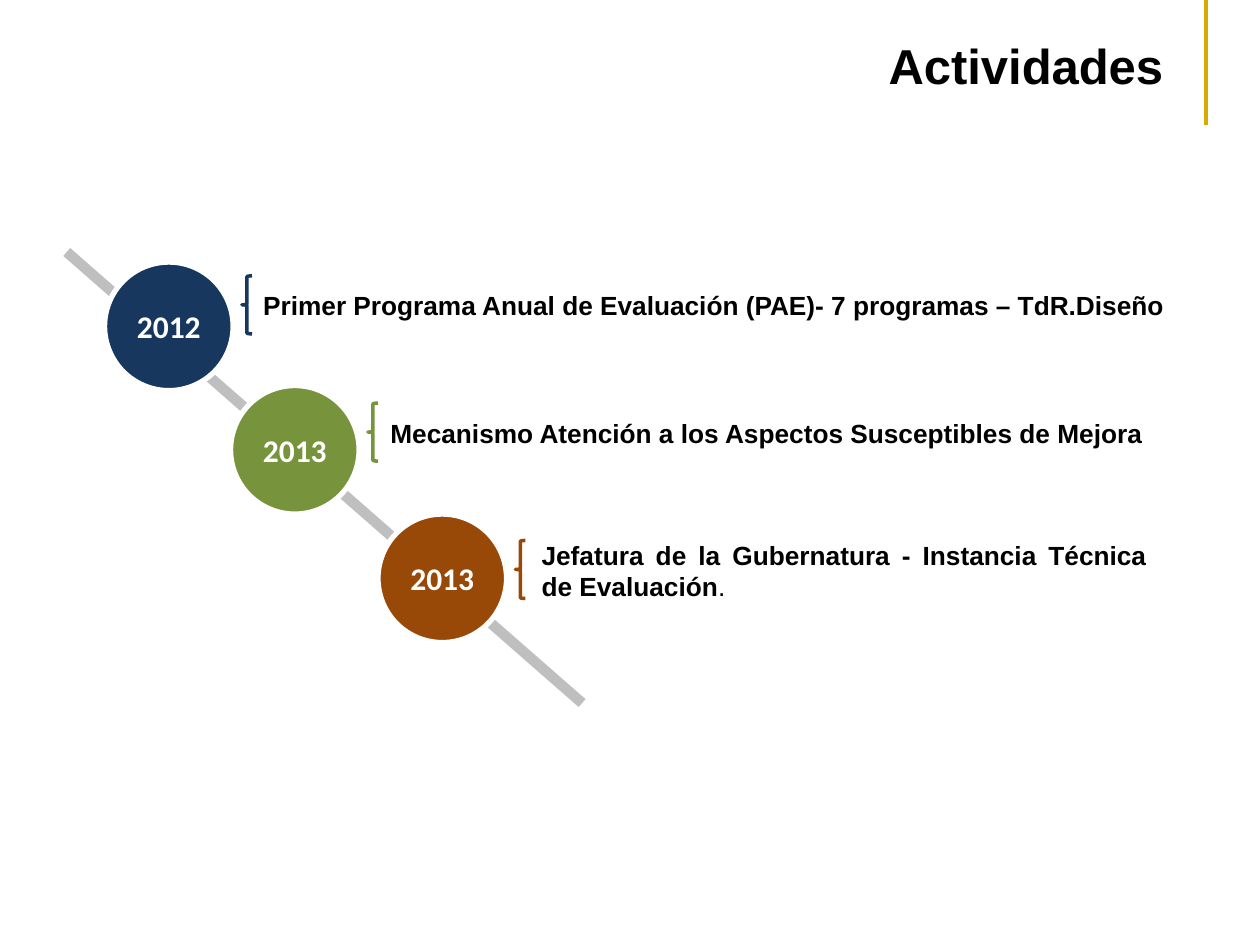
from lxml import etree
from pptx import Presentation
from pptx import util as u
from pptx.dml import color
from pptx.enum import shapes, text
from pptx.oxml import ns

BLACK, WHITE, GREY, GOLD = "000000", "FFFFFF", "BFBFBF", "D9A906"
ALIGN = text.PP_ALIGN

# year, colour, circle (left, top), brace top, label (left, top, width), alignment, runs (words, bold)
MILESTONES = [
    ("2012", "17375E", (0.83, 2.08), 2.19, (1.99, 2.25, 7.42), ALIGN.LEFT,
     [("Primer Programa Anual de Evaluación (PAE)- 7 programas – TdR.Diseño", True)]),
    ("2013", "77933C", (1.83, 3.06), 3.2, (3, 3.26, 6.22), ALIGN.LEFT,
     [("Mecanismo Atención a los Aspectos Susceptibles de Mejora", True)]),
    ("2013", "984807", (3, 4.08), 4.29, (4.2, 4.23, 5), ALIGN.JUSTIFY,
     [("Jefatura de la Gubernatura - Instancia Técnica de Evaluación", True), (".", False)]),
]


def paint(target, hex_colour):
    """Give a fill or a line a solid colour."""
    fill = getattr(target, "fill", target)
    fill.solid()
    fill.fore_color.rgb = color.RGBColor.from_string(hex_colour)


def write(frame, runs, size, font_name, hex_colour, align, anchor):
    """Write one paragraph of (words, bold) runs."""
    frame.word_wrap = True
    frame.vertical_anchor = anchor
    paragraph = frame.paragraphs[0]
    paragraph.alignment = align
    for words, bold in runs:
        run = paragraph.add_run()
        run.text = words
        run.font.size, run.font.name, run.font.bold = u.Pt(size), font_name, bold
        paint(run.font, hex_colour)


def add_label(slide, box, runs, size, align, anchor=text.MSO_ANCHOR.TOP):
    """Add a black Arial text box."""
    label = slide.shapes.add_textbox(*map(u.Inches, box))
    write(label.text_frame, runs, size, "Arial", BLACK, align, anchor)


def add_line(slide, start, end, hex_colour, width):
    """Add a straight line without a shadow."""
    line = slide.shapes.add_connector(
        shapes.MSO_CONNECTOR.STRAIGHT, *map(u.Inches, start + end))
    paint(line.line, hex_colour)
    line.line.width = u.Pt(width)
    etree.SubElement(line._element.spPr, ns.qn("a:effectLst"))


def add_outlined(slide, preset, box, line_colour, width):
    """Add a preset shape with an outline and no fill."""
    shape = slide.shapes.add_shape(preset, *map(u.Inches, box))
    shape.shadow.inherit = False
    shape.fill.background()
    paint(shape.line, line_colour)
    shape.line.width = u.Pt(width)
    return shape


def add_milestone(slide, year, hue, corner, brace_top, label_box, align, runs):
    """Add a year circle with its brace and description."""
    left, top = corner
    circle = add_outlined(slide, shapes.MSO_SHAPE.OVAL, (left, top, 1.02, 1.02), WHITE, 3)
    paint(circle, hue)
    write(circle.text_frame, [(year, True)], 18, "Calibri", WHITE,
          ALIGN.CENTER, text.MSO_ANCHOR.MIDDLE)
    brace_box = (left + 1.09, brace_top, 0.08, 0.46)
    add_outlined(slide, shapes.MSO_SHAPE.LEFT_BRACE, brace_box, hue, 2)
    label_height = 0.35 if len(runs) == 1 else 0.61
    add_label(slide, (*label_box, label_height), runs, 15, align)


def main():
    """Build the activities timeline slide."""
    deck = Presentation()
    deck.slide_width, deck.slide_height = u.Inches(10), u.Inches(7.5)
    slide = deck.slides.add_slide(deck.slide_layouts[6])
    add_label(slide, (3.19, 0.21, 6.14, 0.61), [("Actividades", True)], 28,
              ALIGN.RIGHT, text.MSO_ANCHOR.MIDDLE)
    add_line(slide, (9.57, 0), (9.57, 0.99), GOLD, 2)
    add_line(slide, (0.53, 2), (4.62, 5.58), GREY, 6)
    for milestone in MILESTONES:
        add_milestone(slide, *milestone)
    deck.save("out.pptx")


if __name__ == "__main__":
    main()
